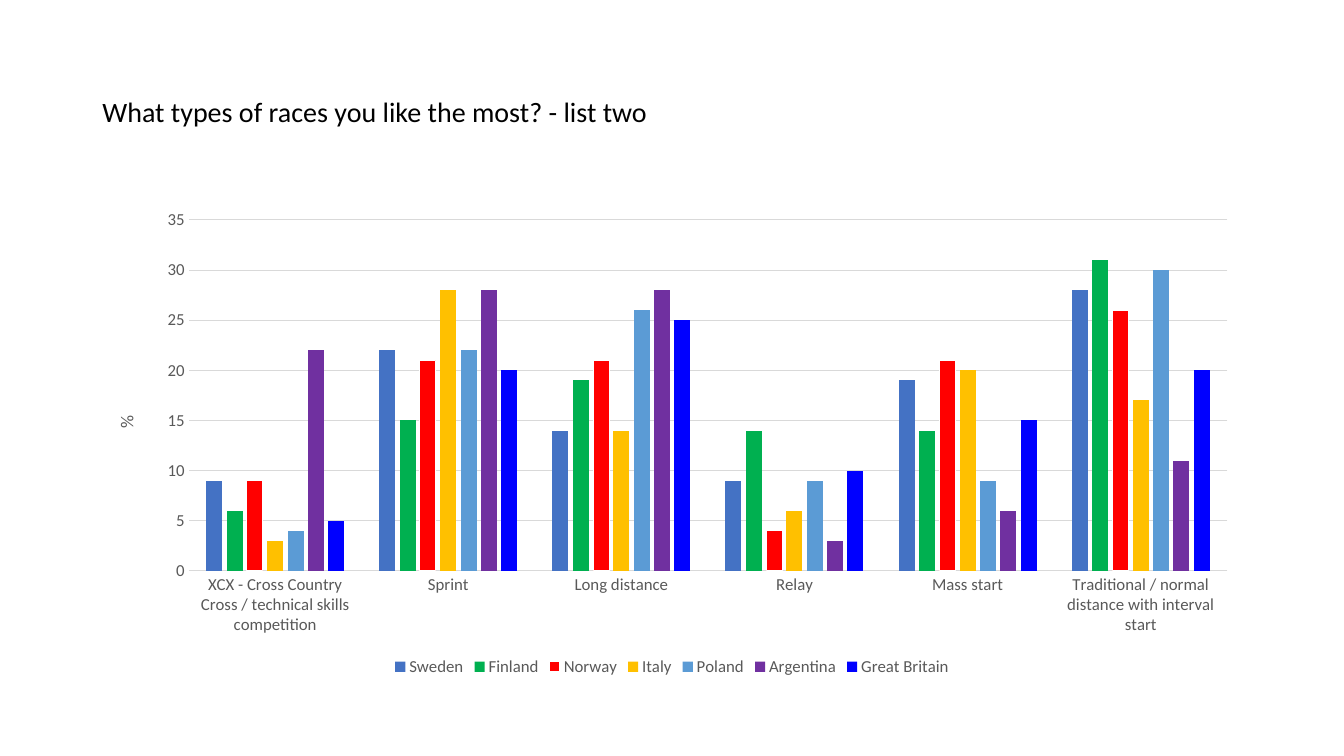
from lxml import etree
from pptx import Presentation
from pptx import util as u
from pptx.chart import data as chart_data
from pptx.dml.color import RGBColor
from pptx.enum import chart as charts, text
from pptx.oxml import ns

WIDTH, HEIGHT = u.Inches(13.33), u.Inches(7.5)
FONT = "Calibri"

BLACK = RGBColor(0x00, 0x00, 0x00)
WHITE = RGBColor(0xFF, 0xFF, 0xFF)
GREY = RGBColor(0x59, 0x59, 0x59)
GRID = RGBColor(0xD9, 0xD9, 0xD9)
BLUE = RGBColor(0x44, 0x72, 0xC4)
GREEN = RGBColor(0x00, 0xB0, 0x50)
RED = RGBColor(0xFF, 0x00, 0x00)
GOLD = RGBColor(0xFF, 0xC0, 0x00)
SKY = RGBColor(0x5B, 0x9B, 0xD5)
PURPLE = RGBColor(0x70, 0x30, 0xA0)
DEEP_BLUE = RGBColor(0x00, 0x00, 0xFF)

RACES = ["XCX - Cross Country Cross / technical skills competition", "Sprint",
         "Long distance", "Relay", "Mass start",
         "Traditional / normal distance with interval start"]
COUNTRIES = [
    ("Sweden", BLUE, (9, 22, 14, 9, 19, 28)),
    ("Finland", GREEN, (6, 15, 19, 14, 14, 31)),
    ("Norway", RED, (9, 21, 21, 4, 21, 26)),
    ("Italy", GOLD, (3, 28, 14, 6, 20, 17)),
    ("Poland", SKY, (4, 22, 26, 9, 9, 30)),
    ("Argentina", PURPLE, (22, 28, 28, 3, 6, 11)),
    ("Great Britain", DEEP_BLUE, (5, 20, 25, 10, 15, 20)),
]


def area(left, top, width, height):
    """Turn percentages of the slide's size into lengths."""
    return (int(WIDTH * left / 100), int(HEIGHT * top / 100),
            int(WIDTH * width / 100), int(HEIGHT * height / 100))


def set_values(target, values):
    for name, value in values.items():
        setattr(target, name, value)


def set_font(font, size, color):
    set_values(font, {"name": FONT, "size": u.Pt(size), "bold": False})
    font.color.rgb = color


def set_line(line, color):
    line.color.rgb = color
    line.width = u.Pt(0.75)


def set_layout(parent, **percents):
    """Place a chart part by percentages of the chart's size."""
    layout = parent.find(ns.qn("c:layout"))
    if layout is None:
        layout = etree.Element(ns.qn("c:layout"))
        parent.insert(1 if parent.tag == ns.qn("c:title") else 0, layout)
    for child in list(layout):
        layout.remove(child)
    manual = etree.SubElement(layout, ns.qn("c:manualLayout"))
    if "w" in percents:
        etree.SubElement(manual, ns.qn("c:layoutTarget")).set("val", "inner")
    for side in "xy":
        etree.SubElement(manual, ns.qn(f"c:{side}Mode")).set("val", "edge")
    for name, percent in percents.items():
        etree.SubElement(manual, ns.qn(f"c:{name}")).set("val", str(percent / 100))


def add_title(slide, words, box):
    shape = slide.shapes.add_textbox(*box)
    set_values(shape.text_frame, {"word_wrap": True,
                                  "vertical_anchor": text.MSO_ANCHOR.MIDDLE})
    paragraph = shape.text_frame.paragraphs[0]
    paragraph.line_spacing = 0.9
    run = paragraph.add_run()
    run.text = words
    set_font(run.font, 20, BLACK)


def style_axes(chart):
    category_axis, value_axis = chart.category_axis, chart.value_axis
    for axis in (category_axis, value_axis):
        set_values(axis, {"major_tick_mark": charts.XL_TICK_MARK.NONE,
                          "minor_tick_mark": charts.XL_TICK_MARK.NONE})
        set_font(axis.tick_labels.font, 12, GREY)
    set_line(category_axis.format.line, GRID)
    value_axis.format.line.fill.background()
    set_line(value_axis.major_gridlines.format.line, GRID)
    set_values(value_axis, {"minimum_scale": 0, "maximum_scale": 35, "major_unit": 5})
    set_values(value_axis.tick_labels, {"number_format": "0",
                                        "number_format_is_linked": False})

    # Turned unit label beside the value axis
    frame = value_axis.axis_title.text_frame
    frame.text = "%"
    set_font(frame.paragraphs[0].runs[0].font, 13, GREY)
    body = frame._txBody.find(ns.qn("a:bodyPr"))
    body.set("rot", "-5400000")
    body.set("vert", "horz")
    set_layout(value_axis.axis_title._element, x=1.6, y=44)


def add_column_chart(slide, box):
    data = chart_data.CategoryChartData(number_format="0")
    data.categories = RACES
    for name, _, values in COUNTRIES:
        data.add_series(name, values)
    chart = slide.shapes.add_chart(
        charts.XL_CHART_TYPE.COLUMN_CLUSTERED, *box, data).chart
    set_font(chart.font, 10, BLACK)
    set_values(chart, {"has_title": False, "has_legend": True})

    # Columns
    plot = chart.plots[0]
    set_values(plot, {"gap_width": 219, "overlap": -27, "vary_by_categories": False})
    for series, (name, color, _) in zip(plot.series, COUNTRIES):
        series.format.fill.solid()
        series.format.fill.fore_color.rgb = color
        series.invert_if_negative = False
        if name == "Norway":
            set_line(series.format.line, WHITE)

    # Axes, legend and plot area
    style_axes(chart)
    set_values(chart.legend, {"position": charts.XL_LEGEND_POSITION.BOTTOM,
                              "include_in_layout": False})
    set_font(chart.legend.font, 12, GREY)
    plot_area = chart._chartSpace.find(".//" + ns.qn("c:plotArea"))
    set_layout(plot_area, x=8.3, y=3.9, w=89.6, h=73.2)


def main():
    presentation = Presentation()
    set_values(presentation, {"slide_width": WIDTH, "slide_height": HEIGHT})
    slide = presentation.slides.add_slide(presentation.slide_layouts[6])
    add_title(slide, "What types of races you like the most? - list two",
              area(6.88, 5.33, 86.25, 19.33))
    add_column_chart(slide, area(6.88, 26.62, 86.25, 63.44))
    presentation.save("out.pptx")


if __name__ == "__main__":
    main()
